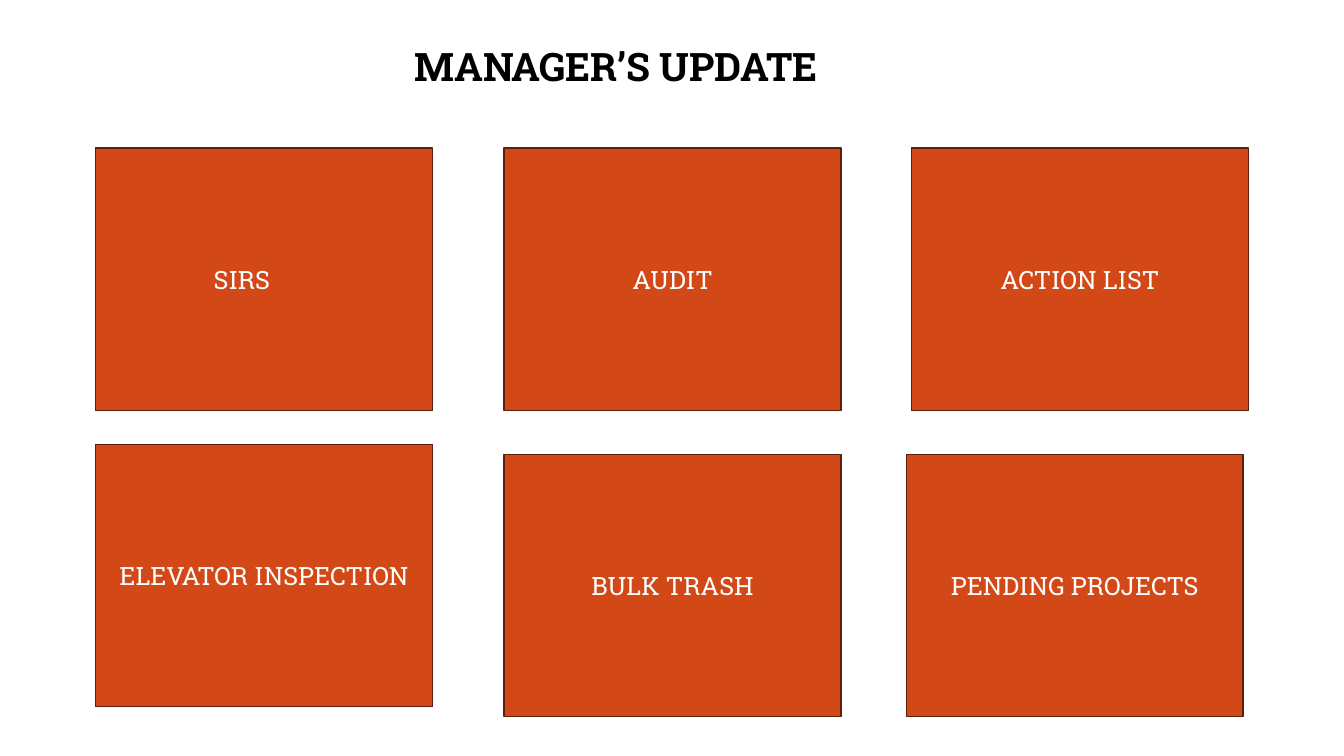
"""Build the manager's update slide with its six topic cards."""
from typing import Any, NamedTuple

import pptx
import pptx.dml.color
import pptx.enum.shapes
import pptx.enum.text
import pptx.util

EMU_PER_PX = 9144
COLORS = {"title": "000000", "card": "D34817", "border": "5C200A", "label": "FFFFFF"}
FONT_NAME = "Roboto Slab"
COLUMN_LEFTS = (95, 500, 904)
ROW_TOPS = (147, 441)
CARD_WIDTH, CARD_HEIGHT = 334, 260


class Card(NamedTuple):
    label: str
    column: int
    row: int
    shift_x: int = 0
    shift_y: int = 0


CARDS = (
    Card("SIRS\t", 0, 0),
    Card("AUDIT", 1, 0),
    Card("ACTION LIST", 2, 0),
    Card("ELEVATOR INSPECTION", 0, 1),
    Card("BULK TRASH", 1, 1, shift_y=10),
    Card("PENDING PROJECTS", 2, 1, shift_x=-5, shift_y=10),
)


def px(length: int) -> pptx.util.Emu:
    return pptx.util.Emu(length * EMU_PER_PX)


def color(role: str) -> pptx.dml.color.RGBColor:
    return pptx.dml.color.RGBColor.from_string(COLORS[role])


def apply(target: Any, values: dict[str, Any]) -> None:
    for name, value in values.items():
        setattr(target, name, value)


def write(shape: Any, text: str, role: str, size: int, bold: bool,
          alignment: Any, anchor: Any) -> None:
    apply(shape.text_frame, {"word_wrap": True, "vertical_anchor": anchor})
    paragraph = shape.text_frame.paragraphs[0]
    paragraph.alignment = alignment
    run = paragraph.add_run()
    run.text = text
    apply(run.font, {"name": FONT_NAME, "size": pptx.util.Pt(size), "bold": bold})
    run.font.color.rgb = color(role)


def add_title(slide: Any) -> None:
    title = slide.shapes.title
    apply(title, {"left": px(401), "top": px(37), "width": px(531), "height": px(57)})
    write(title, "MANAGER’S UPDATE", "title", 28, True,
          pptx.enum.text.PP_ALIGN.LEFT, pptx.enum.text.MSO_ANCHOR.TOP)
    title.text_frame.auto_size = pptx.enum.text.MSO_AUTO_SIZE.SHAPE_TO_FIT_TEXT


def add_card(slide: Any, card: Card) -> None:
    process = slide.shapes.add_shape(
        pptx.enum.shapes.MSO_SHAPE.FLOWCHART_PROCESS,
        px(COLUMN_LEFTS[card.column] + card.shift_x),
        px(ROW_TOPS[card.row] + card.shift_y),
        px(CARD_WIDTH), px(CARD_HEIGHT),
    )
    process.shadow.inherit = False
    process.fill.solid()
    process.fill.fore_color.rgb = color("card")
    process.line.color.rgb = color("border")
    process.line.width = pptx.util.Pt(1)
    write(process, card.label, "label", 18, False,
          pptx.enum.text.PP_ALIGN.CENTER, pptx.enum.text.MSO_ANCHOR.MIDDLE)


def main() -> None:
    deck = pptx.Presentation()
    apply(deck, {"slide_width": px(1333), "slide_height": px(750)})
    update = deck.slides.add_slide(deck.slide_layouts.get_by_name("Title Only"))
    add_title(update)
    for card in CARDS:
        add_card(update, card)
    deck.save("out.pptx")


if __name__ == "__main__":
    main()
